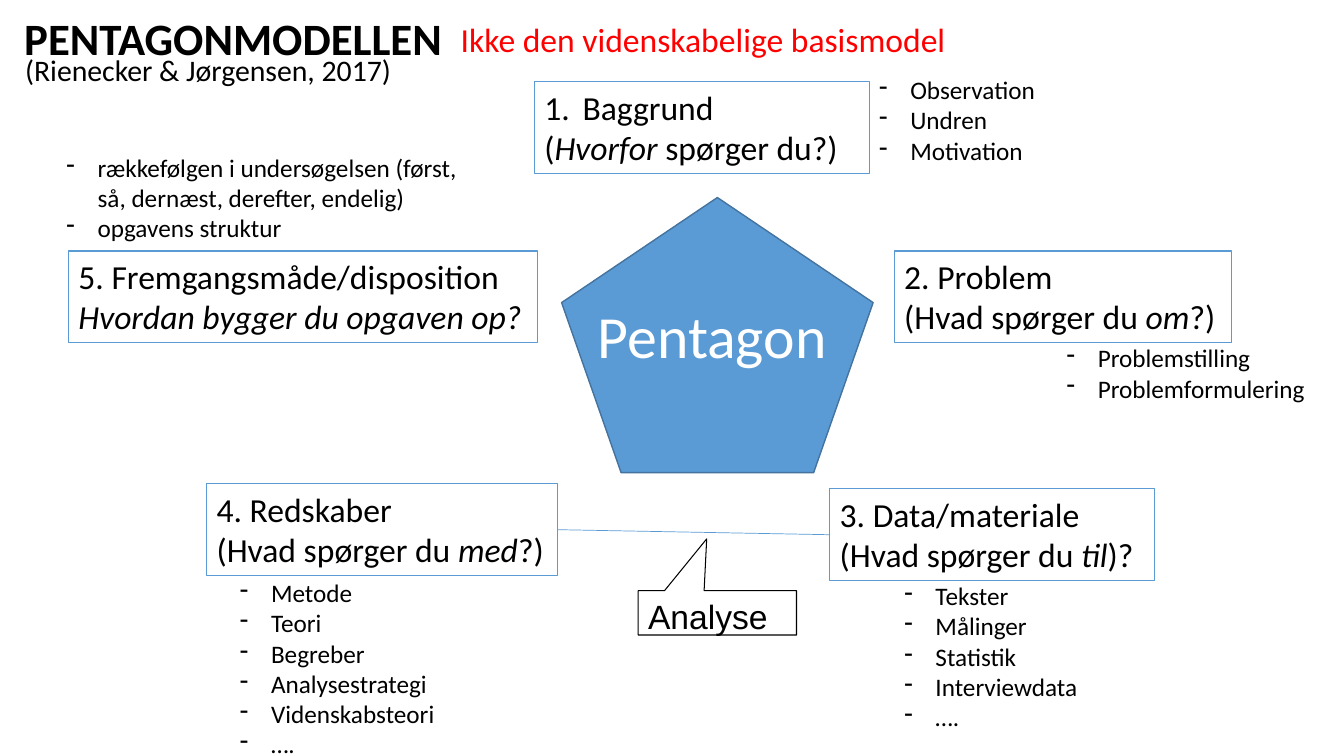
from dataclasses import dataclass
from typing import Any, Optional

import pptx
import pptx.dml.color
import pptx.enum.shapes
import pptx.enum.text
import pptx.oxml.ns
import pptx.util
from lxml import etree

Inches = pptx.util.Inches
SHAPE = pptx.enum.shapes.MSO_SHAPE
ALIGN = pptx.enum.text.PP_ALIGN


@dataclass(frozen=True)
class Theme:
    font: str = "Calibri"
    callout_font: str = "Arial"
    blue: str = "5B9BD5"
    dark_blue: str = "43739E"
    black: str = "000000"
    white: str = "FFFFFF"
    red: str = "FF0000"
    title: float = 32
    heading: float = 24
    citation: float = 21.3
    item: float = 18
    centre: float = 42.7


THEME = Theme()


@dataclass(frozen=True)
class Area:
    left: float
    top: float
    width: float
    height: float

    def lengths(self) -> list[int]:
        return [Inches(v) for v in (self.left, self.top, self.width, self.height)]


@dataclass(frozen=True)
class Step:
    area: Area
    heading: str
    question: str
    numbered: bool = False


@dataclass(frozen=True)
class BulletList:
    area: Area
    items: tuple[str, ...]


@dataclass(frozen=True)
class Label:
    area: Area
    text: str
    size: float
    color: str = THEME.black
    bold: bool = False
    wrap: bool = True
    inset: Optional[float] = None
    spacing: Optional[float] = None


STEPS = (
    Step(Area(5.3, 0.81, 3.32, 0.91), "Baggrund", "(*Hvorfor *spørger du?)", True),
    Step(Area(8.87, 2.49, 3.34, 0.91), "2. Problem", "(Hvad spørger du *om*?)"),
    Step(Area(8.23, 4.85, 3.22, 0.91), "3. Data/materiale", "(Hvad spørger du *til*)?"),
    Step(Area(2.05, 4.8, 3.48, 0.91), "4. Redskaber", "(Hvad spørger du *med*?)"),
    Step(Area(0.68, 2.49, 4.65, 0.91), "5. Fremgangsmåde/disposition",
         "*Hvordan bygger du opgaven op?*"),
)

LISTS = (
    BulletList(Area(8.62, 0.69, 2.72, 1.01), ("Observation", "Undren", "Motivation")),
    BulletList(Area(10.48, 3.35, 2.72, 0.71), ("Problemstilling", "Problemformulering")),
    BulletList(Area(8.87, 5.71, 2.72, 1.62),
               ("Tekster", "Målinger", "Statistik", "Interviewdata", "….")),
    BulletList(Area(2.28, 5.68, 2.72, 1.92),
               ("Metode", "Teori", "Begreber", "Analysestrategi", "Videnskabsteori", "….")),
    BulletList(Area(0.56, 1.46, 4.32, 1.01),
               ("rækkefølgen i undersøgelsen (først, så, dernæst, derefter, endelig)",
                "opgavens struktur")),
)

LABELS = (
    Label(Area(5.83, 2.91, 2.49, 0.82), "Pentagon", THEME.centre, THEME.white, wrap=False),
    Label(Area(0.24, 0.14, 4.76, 0.51), "PENTAGONMODELLEN", THEME.title,
          bold=True, inset=0, spacing=0.95),
    Label(Area(0.15, 0.46, 3.88, 0.46), "(Rienecker & Jørgensen, 2017)",
          THEME.citation, wrap=False),
    Label(Area(4.47, 0.14, 5.29, 0.5), "Ikke den videnskabelige basismodel",
          THEME.heading, THEME.red),
)


def rgb(color: str) -> pptx.dml.color.RGBColor:
    return pptx.dml.color.RGBColor.from_string(color)


def format_runs(p: Any, size: float, color: str = THEME.black,
                font: str = THEME.font, bold: bool = False) -> None:
    for r in p.runs:
        r.font.name = font
        r.font.size = pptx.util.Pt(size)
        r.font.bold = bold
        r.font.color.rgb = rgb(color)


def set_bullet(p: Any, indent: float, tag: str, **attributes: str) -> None:
    pPr = p._p.get_or_add_pPr()
    pPr.set("marL", str(Inches(indent)))
    pPr.set("indent", str(-Inches(indent)))
    etree.SubElement(pPr, pptx.oxml.ns.qn(tag), attributes)


def fit_frame(tf: Any, wrap: bool) -> None:
    tf.word_wrap = wrap
    tf.auto_size = pptx.enum.text.MSO_AUTO_SIZE.SHAPE_TO_FIT_TEXT


def add_outline(s: Any, kind: Any, area: Area, line: str, width: float,
                fill: Optional[str] = None) -> Any:
    sp = s.shapes.add_shape(kind, *area.lengths())
    sp.shadow.inherit = False
    if fill:
        sp.fill.solid()
        sp.fill.fore_color.rgb = rgb(fill)
    else:
        sp.fill.background()
    sp.line.color.rgb = rgb(line)
    sp.line.width = pptx.util.Pt(width)
    sp.text_frame.vertical_anchor = pptx.enum.text.MSO_ANCHOR.TOP
    return sp


def add_step(s: Any, step: Step) -> Any:
    sp = add_outline(s, SHAPE.RECTANGLE, step.area, THEME.blue, 0.75)
    tf = sp.text_frame
    fit_frame(tf, False)
    heading = tf.paragraphs[0]
    heading.text = step.heading
    heading.alignment = ALIGN.LEFT
    if step.numbered:
        set_bullet(heading, 0.38, "a:buAutoNum", type="arabicPeriod")
    question = tf.add_paragraph()
    question.alignment = ALIGN.CENTER if step.numbered else ALIGN.LEFT
    for i, part in enumerate(step.question.split("*")):
        if part:
            r = question.add_run()
            r.text = part
            r.font.italic = i % 2 == 1
    for p in tf.paragraphs:
        format_runs(p, THEME.heading)
    return sp


def add_list(s: Any, bullets: BulletList) -> None:
    tf = s.shapes.add_textbox(*bullets.area.lengths()).text_frame
    fit_frame(tf, True)
    tf.text = "\n".join(bullets.items)
    for p in tf.paragraphs:
        set_bullet(p, 0.31, "a:buChar", char="-")
        format_runs(p, THEME.item)


def add_label(s: Any, label: Label) -> None:
    tf = s.shapes.add_textbox(*label.area.lengths()).text_frame
    fit_frame(tf, label.wrap)
    if label.inset is not None:
        tf.margin_left = tf.margin_right = Inches(label.inset)
        tf.margin_top = tf.margin_bottom = Inches(label.inset)
    tf.text = label.text
    p = tf.paragraphs[0]
    if label.spacing:
        p.line_spacing = label.spacing
    format_runs(p, label.size, label.color, bold=label.bold)


def add_callout(s: Any, area: Area, text: str) -> None:
    sp = add_outline(s, SHAPE.RECTANGULAR_CALLOUT, area, THEME.black, 0.75)
    sp.adjustments[0] = -0.067
    sp.adjustments[1] = -1.667
    sp.text_frame.text = text
    p = sp.text_frame.paragraphs[0]
    p.alignment = ALIGN.LEFT
    format_runs(p, THEME.heading, font=THEME.callout_font)


def join_boxes(s: Any, left: Any, right: Any) -> None:
    line = s.shapes.add_connector(pptx.enum.shapes.MSO_CONNECTOR.STRAIGHT, 0, 0, 0, 0)
    line.begin_connect(left, 3)
    line.end_connect(right, 1)
    line.line.color.rgb = rgb(THEME.blue)
    line.line.width = pptx.util.Pt(0.5)
    etree.SubElement(line._element.spPr, pptx.oxml.ns.qn("a:effectLst"))


def main() -> None:
    prs = pptx.Presentation()
    prs.slide_width, prs.slide_height = Inches(13.33), Inches(7.5)
    s = prs.slides.add_slide(prs.slide_layouts[6])
    add_outline(s, SHAPE.REGULAR_PENTAGON, Area(5.57, 1.96, 3.09, 2.73),
                THEME.dark_blue, 1, THEME.blue)
    background, problem, data, tools, procedure = [add_step(s, step) for step in STEPS]
    for bullets in LISTS:
        add_list(s, bullets)
    add_callout(s, Area(6.33, 5.86, 1.57, 0.44), "Analyse")
    join_boxes(s, tools, data)
    for label in LABELS:
        add_label(s, label)
    prs.save("out.pptx")


if __name__ == "__main__":
    main()
